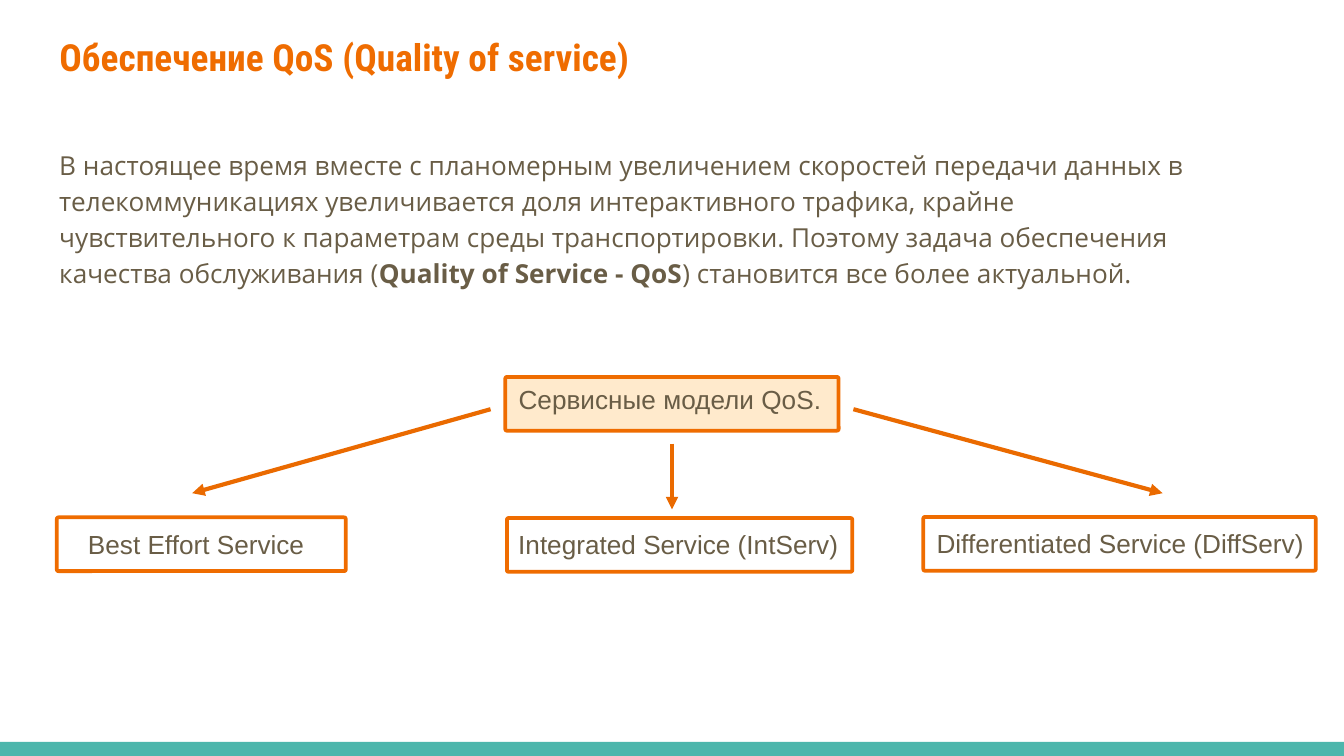
from typing import NamedTuple

from lxml import etree
from pptx import Presentation
from pptx import util as u
from pptx.dml.color import RGBColor
from pptx.enum import shapes, text
from pptx.oxml.ns import qn

COLUMNS, ROWS = 100, 56.25
ORANGE, ARROW_ORANGE, CREAM = "EF6C00", "EA6A00", "FFEACC"
BROWN, TEAL = "695D46", "4DB6AC"
BOX_HEIGHT, LABEL_HEIGHT, FOOTER_HEIGHT = 4, 3.4, 1.05


class Area(NamedTuple):
    column: float
    row: float
    columns: float
    rows: float


class Model(NamedTuple):
    label: str
    box: Area
    label_area: Area
    fill: str | None = None


class Arrow(NamedTuple):
    start: tuple[float, float]
    end: tuple[float, float]


MODELS = [
    Model("Сервисные модели QoS.", Area(37.6, 28.05, 24.8, BOX_HEIGHT),
          Area(37.6, 28.05, 24.8, LABEL_HEIGHT), CREAM),
    Model("Best Effort Service", Area(4.23, 38.5, 21.5, BOX_HEIGHT),
          Area(5.56, 38.83, 18.8, LABEL_HEIGHT)),
    Model("Integrated Service (IntServ)", Area(37.72, 38.55, 25.7, BOX_HEIGHT),
          Area(37.57, 38.83, 26.5, LABEL_HEIGHT)),
    Model("Differentiated Service (DiffServ)", Area(68.7, 38.47, 29.2, BOX_HEIGHT),
          Area(68.7, 38.75, 30.1, LABEL_HEIGHT)),
]
ARROWS = [
    Arrow((36.5, 30.45), (14.3, 36.7)),
    Arrow((50, 33), (50, 37.9)),
    Arrow((63.5, 30.45), (86.5, 36.7)),
]
INTRODUCTION = [
    ("В настоящее время вместе с планомерным увеличением скоростей передачи данных в "
     "телекоммуникациях увеличивается доля интерактивного трафика, крайне "
     "чувствительного к параметрам среды транспортировки. Поэтому задача обеспечения "
     "качества обслуживания (", False),
    ("Quality of Service - QoS", True),
    (") становится все более актуальной.", False),
]

presentation = Presentation()
presentation.slide_width = u.Inches(10)
presentation.slide_height = presentation.slide_width * 9 // 16
slide = presentation.slides.add_slide(presentation.slide_layouts[5])


def across(column: float) -> int:
    return round(presentation.slide_width * column / COLUMNS)


def down(row: float) -> int:
    return round(presentation.slide_height * row / ROWS)


def place(area: Area) -> tuple[int, int, int, int]:
    return across(area.column), down(area.row), across(area.columns), down(area.rows)


def color(value: str) -> RGBColor:
    return RGBColor.from_string(value)


def format_run(run, size: float, font: str, ink: str, bold: bool = False) -> None:
    run.font.size = u.Pt(size)
    run.font.name = font
    run.font.bold = bold
    run.font.color.rgb = color(ink)


def set_frame(frame, wrap: bool, auto_size, margin: float = 0.1) -> None:
    frame.word_wrap = wrap
    frame.auto_size = auto_size
    frame.vertical_anchor = text.MSO_ANCHOR.TOP
    frame.margin_left = frame.margin_right = u.Inches(0.1)
    frame.margin_top = frame.margin_bottom = u.Inches(margin)


def draw_box(area: Area, kind, fill: str | None, line: str | None = None):
    shape = slide.shapes.add_shape(kind, *place(area))
    shape.shadow.inherit = False
    if fill:
        shape.fill.solid()
        shape.fill.fore_color.rgb = color(fill)
    else:
        shape.fill.background()
    if line:
        shape.line.color.rgb = color(line)
        shape.line.width = u.Pt(2)
    else:
        shape.line.fill.background()
    return shape


def draw_model(model: Model) -> None:
    box = draw_box(model.box, shapes.MSO_SHAPE.ROUNDED_RECTANGLE, model.fill, ORANGE)
    box.adjustments[0] = 0.03
    label = slide.shapes.add_textbox(*place(model.label_area))
    set_frame(label.text_frame, False, text.MSO_AUTO_SIZE.SHAPE_TO_FIT_TEXT, 0.05)
    label.text_frame.text = model.label
    format_run(label.text_frame.paragraphs[0].runs[0], 14, "Arial", BROWN)


def draw_arrow(arrow: Arrow) -> None:
    (x1, y1), (x2, y2) = arrow
    connector = slide.shapes.add_connector(
        shapes.MSO_CONNECTOR.STRAIGHT, across(x1), down(y1), across(x2), down(y2))
    connector.line.color.rgb = color(ARROW_ORANGE)
    connector.line.width = u.Pt(2.25)
    properties = connector._element.spPr
    etree.SubElement(properties.find(qn("a:ln")), qn("a:tailEnd"), type="triangle")
    etree.SubElement(properties, qn("a:effectLst"))


def draw_title(title: str, area: Area) -> None:
    shape = slide.shapes.title
    shape.left, shape.top, shape.width, shape.height = place(area)
    set_frame(shape.text_frame, True, text.MSO_AUTO_SIZE.NONE)
    shape.text_frame.text = title
    paragraph = shape.text_frame.paragraphs[0]
    paragraph.alignment = text.PP_ALIGN.LEFT
    format_run(paragraph.runs[0], 20, "Roboto Condensed", ORANGE, True)


def draw_introduction(parts: list[tuple[str, bool]], area: Area) -> None:
    shape = slide.shapes.add_textbox(*place(area))
    set_frame(shape.text_frame, True, text.MSO_AUTO_SIZE.NONE)
    paragraph = shape.text_frame.paragraphs[0]
    paragraph.line_spacing = 1.15
    paragraph.space_after = u.Pt(16)
    for wording, bold in parts:
        run = paragraph.add_run()
        run.text = wording
        format_run(run, 14, "Open Sans", BROWN, bold)


draw_box(Area(0, ROWS - FOOTER_HEIGHT, COLUMNS, FOOTER_HEIGHT),
         shapes.MSO_SHAPE.RECTANGLE, TEAL)
draw_title("Обеспечение QoS (Quality of service)", Area(3.42, 1.55, 93.2, 5.4))
draw_introduction(INTRODUCTION, Area(3.42, 9.74, 88.2, 12))
for model in MODELS:
    draw_model(model)
for arrow in ARROWS:
    draw_arrow(arrow)

presentation.save("out.pptx")
